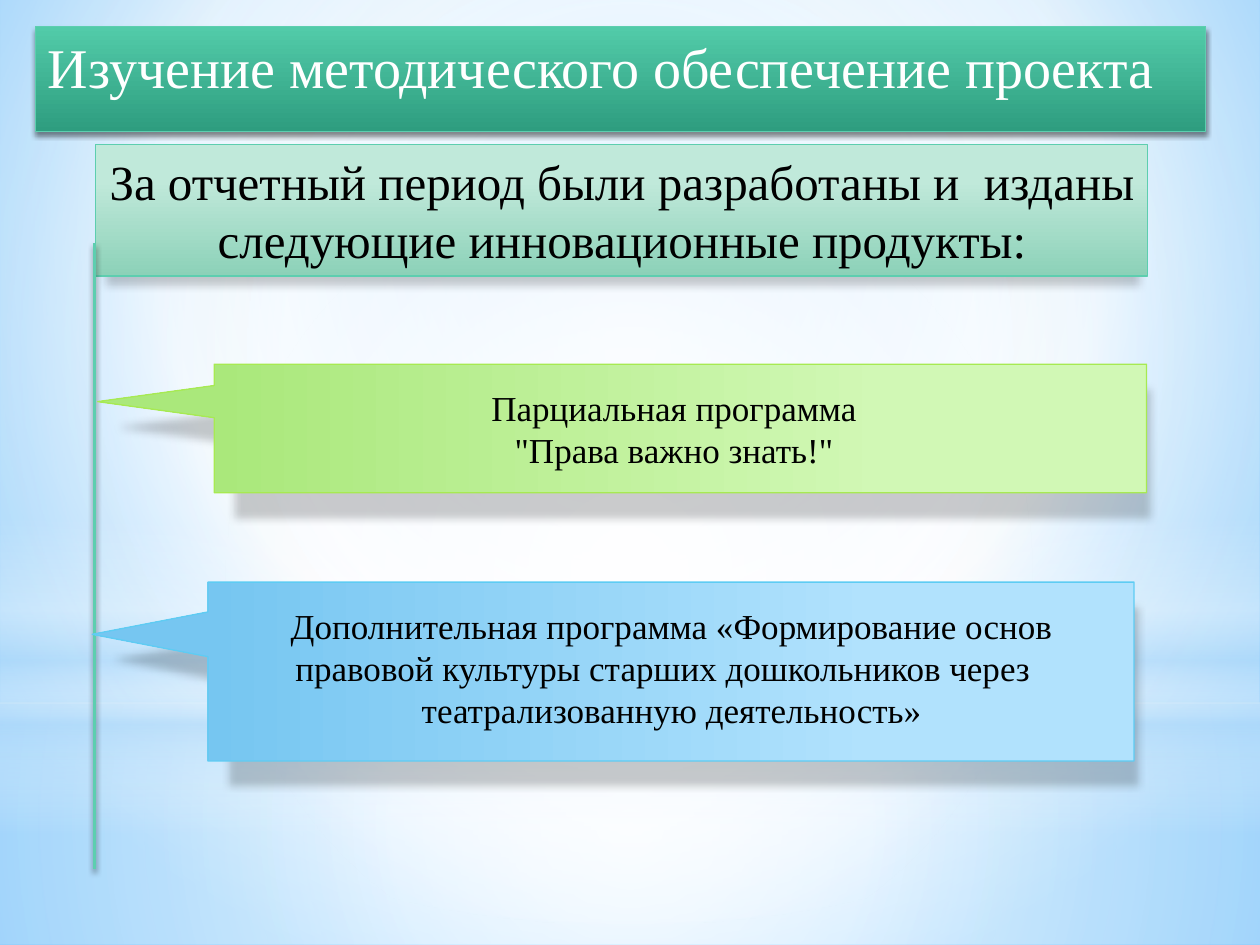
from dataclasses import dataclass

from lxml import etree
from pptx import Presentation
from pptx.dml.color import RGBColor
from pptx.enum.shapes import MSO_CONNECTOR, MSO_SHAPE
from pptx.enum.text import MSO_ANCHOR, MSO_AUTO_SIZE, PP_ALIGN
from pptx.oxml import parse_xml
from pptx.oxml.ns import nsdecls, qn
from pptx.util import Inches, Pt

RECT, OVAL = MSO_SHAPE.RECTANGLE, MSO_SHAPE.OVAL
CALLOUT = MSO_SHAPE.RECTANGULAR_CALLOUT
STRAIGHT = MSO_CONNECTOR.STRAIGHT
LEFT, CENTER = PP_ALIGN.LEFT, PP_ALIGN.CENTER
TOP = MSO_ANCHOR.TOP
GROW = MSO_AUTO_SIZE.SHAPE_TO_FIT_TEXT
TITLE_ONLY = 5
MIDDLE = (50, 50, 50, 50)


@dataclass(frozen=True)
class Theme:
    font: str = "Times New Roman"
    title_size: int = 32
    heading_size: int = 28
    body_size: int = 20
    white: str = "FFFFFF"
    black: str = "000000"
    haze: str = "B4DCFA"
    sky: tuple = ((0, "9ED5FF"), (60, "FFFFFF"), (100, "5BB9FF"))
    teal: str = "5DCEAF"
    teal_strong: tuple = ((0, "52CBA9"), (100, "2E9D7F"))
    teal_soft: tuple = ((28, "C0E9DA"), (100, "8CD1B8"))
    lime: str = "A7EA52"
    lime_soft: tuple = ((28, "D1F8B5"), (100, "AAE87B"))
    blue: str = "5ECCF3"
    blue_soft: tuple = ((28, "B1E2FD"), (100, "76C6F1"))
    # opacity %, blur pt, distance pt, scale %
    near_shadow: tuple = (45, 3.1, 1.8, 100)
    soft_shadow: tuple = (20, 5, 4, 98)


class SlideBuilder:
    def __init__(self, slide, theme):
        self.s = slide
        self.t = theme

    def gradient(self, fill, element, stops, focus=None):
        """Fill with (position, colour[, opacity]) stops: vertical, or radial around focus."""
        fill.gradient()
        old = element.find(".//" + qn("a:gradFill"))
        grad = parse_xml(f'<a:gradFill {nsdecls("a")} rotWithShape="1"><a:gsLst/></a:gradFill>')
        for pos, color, *opacity in stops:
            gs = etree.SubElement(grad[0], qn("a:gs"), pos=str(pos * 1000))
            clr = etree.SubElement(gs, qn("a:srgbClr"), val=color)
            if opacity:
                etree.SubElement(clr, qn("a:alpha"), val=str(opacity[0] * 1000))
        if focus:
            radial = etree.SubElement(grad, qn("a:path"), {"path": "circle"})
            sides = {k: str(v * 1000) for k, v in zip("ltrb", focus)}
            etree.SubElement(radial, qn("a:fillToRect"), sides)
        else:
            etree.SubElement(grad, qn("a:lin"), ang="5400000", scaled="0")
        old.getparent().replace(old, grad)

    def outline(self, sp, color, width, shadow):
        """Draw the line, then a shadow that falls straight down."""
        sp.line.color.rgb = RGBColor.from_string(color)
        sp.line.width = Pt(width)
        opacity, blur, dist, scale = shadow
        spPr = sp._element.spPr
        for old in spPr.findall(qn("a:effectLst")):
            spPr.remove(old)
        spPr.append(parse_xml(
            f'<a:effectLst {nsdecls("a")}><a:outerShdw blurRad="{Pt(blur)}" dist="{Pt(dist)}" '
            f'dir="5400000" sx="{scale * 1000}" sy="{scale * 1000}" rotWithShape="0">'
            f'<a:srgbClr val="{self.t.black}"><a:alpha val="{opacity * 1000}"/></a:srgbClr>'
            '</a:outerShdw></a:effectLst>'))

    def set_text(self, sp, text, size, color, align):
        tf = sp.text_frame
        tf.text = text
        tf.word_wrap = True
        tf.auto_size = GROW
        tf.vertical_anchor = TOP
        for p in tf.paragraphs:
            p.alignment = align
            for r in p.runs:
                r.font.name = self.t.font
                r.font.size = Pt(size)
                r.font.color.rgb = RGBColor.from_string(color)

    def background(self, stops, focus):
        self.gradient(self.s.background.fill, self.s._element, stops, focus)

    def shape(self, kind, box, stops, focus=None):
        sp = self.s.shapes.add_shape(kind, *map(Inches, box))
        sp.shadow.inherit = False
        self.gradient(sp.fill, sp._element, stops, focus)
        sp.line.fill.background()
        return sp

    def title(self, box, text):
        sp = self.s.shapes.title
        sp.left, sp.top, sp.width, sp.height = map(Inches, box)
        self.s.shapes._spTree.append(sp._element)  # in front of the backdrop
        self.gradient(sp.fill, sp._element, self.t.teal_strong)
        self.outline(sp, self.t.teal, 0.75, self.t.near_shadow)
        self.set_text(sp, text, self.t.title_size, self.t.white, LEFT)

    def heading(self, box, text):
        sp = self.shape(RECT, box, self.t.teal_soft)
        self.outline(sp, self.t.teal, 0.75, self.t.soft_shadow)
        self.set_text(sp, text, self.t.heading_size, self.t.black, CENTER)

    def stem(self, x, top, bottom):
        line = self.s.shapes.add_connector(STRAIGHT, *map(Inches, (x, top, x, bottom)))
        self.outline(line, self.t.teal, 2, self.t.near_shadow)

    def callout(self, box, stops, color):
        """Callout turned by 90 degrees so that its tip points left; box is as seen."""
        x, y, w, h = box
        upright = (x + (w - h) / 2, y + (h - w) / 2, h, w)
        sp = self.shape(CALLOUT, upright, stops)
        sp.rotation = 90
        self.outline(sp, color, 0.75, self.t.soft_shadow)

    def label(self, box, text):
        sp = self.s.shapes.add_textbox(*map(Inches, box))
        self.set_text(sp, text, self.t.body_size, self.t.black, CENTER)


def draw_backdrop(b):
    w, haze = b.t.white, b.t.haze
    b.background(b.t.sky, (20, 10, 20, 60))
    b.shape(RECT, (0, 5.58, 10, 1.92), ((0, w, 91), (37, w, 76), (100, haze, 79)), MIDDLE)
    b.shape(RECT, (0, 0, 10, 5.58), ((0, w, 89), (48, w, 62), (100, haze, 79)), MIDDLE)
    b.shape(RECT, (0, 4.12, 10, 2.5), ((0, w, 0), (29, w, 30), (45, haze, 40),
                                       (55, w, 26), (65, haze, 60), (100, w, 0)))
    b.shape(OVAL, (0, 1.75, 10, 5.58), ((0, w), (56, w, 0)), MIDDLE)


def main():
    prs = Presentation()
    prs.slide_width, prs.slide_height = Inches(10), Inches(7.5)
    theme = Theme()
    b = SlideBuilder(prs.slides.add_slide(prs.slide_layouts[TITLE_ONLY]), theme)

    draw_backdrop(b)
    b.title((0.28, 0.21, 9.29, 0.64), "Изучение методического обеспечение проекта")
    b.heading((0.76, 1.15, 8.35, 1.04),
              "За отчетный период были разработаны и  изданы следующие инновационные продукты:")
    b.stem(0.75, 1.93, 6.9)

    b.callout((1.7, 2.89, 7.4, 1.02), theme.lime_soft, theme.lime)
    b.callout((1.65, 4.62, 7.35, 1.42), theme.blue_soft, theme.blue)
    b.label((1.82, 3.02, 7.06, 0.77), 'Парциальная программа\n "Права важно знать!" ')
    b.label((1.77, 4.75, 7.12, 1.11),
            "Дополнительная программа «Формирование основ правовой культуры "
            "старших дошкольников через   театрализованную деятельность»")

    prs.save("out.pptx")


if __name__ == "__main__":
    main()
